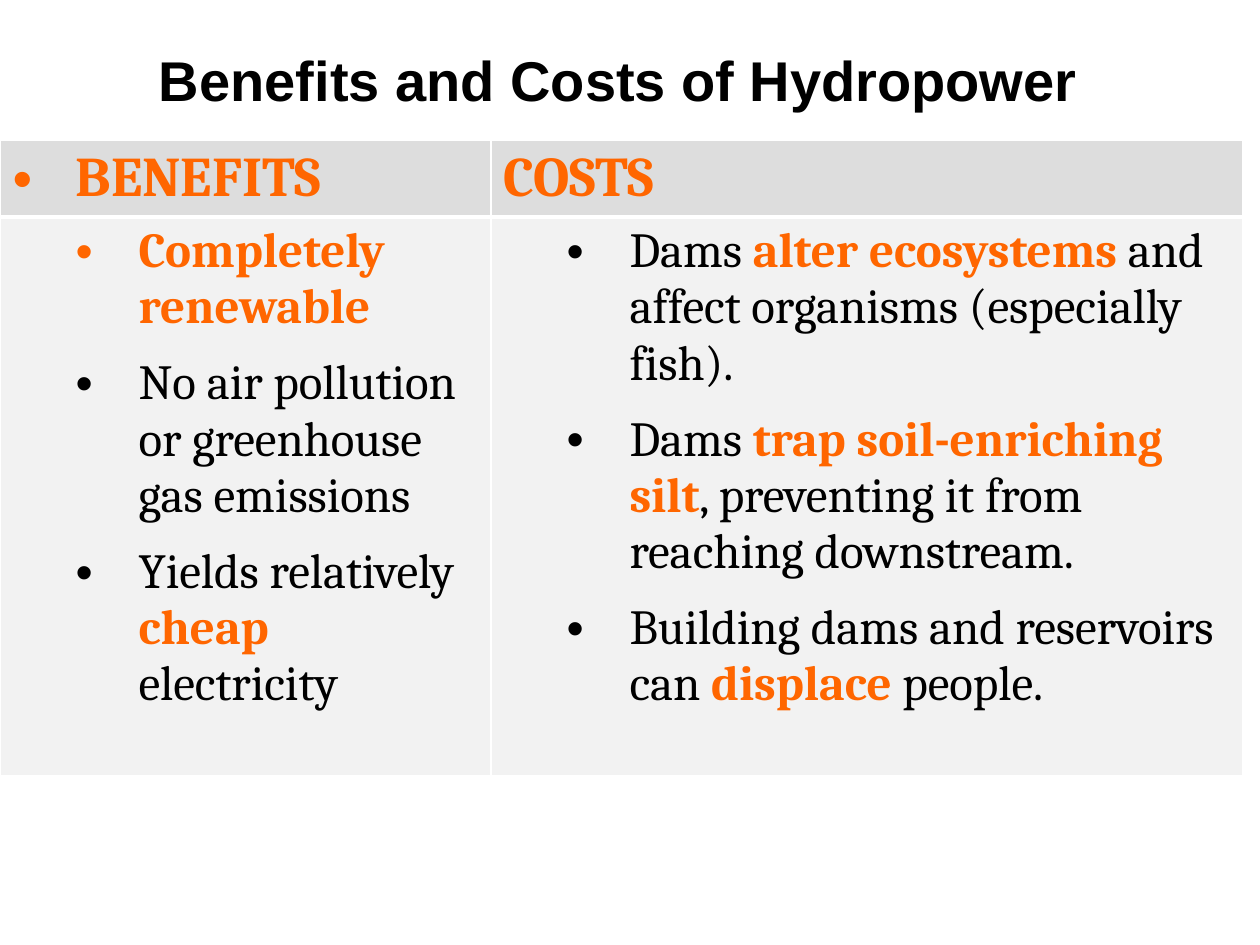
from lxml.etree import SubElement
from pptx import Presentation
from pptx.dml.color import RGBColor
from pptx.enum.text import MSO_ANCHOR, PP_ALIGN
from pptx.oxml.ns import qn
from pptx.util import Emu, Pt

TITLE = "Benefits and Costs of Hydropower"
# Text between asterisks is emphasised.
HEADERS = ["*BENEFITS*", "*COSTS*"]
POINTS = [
    [
        "*Completely renewable*",
        "No air pollution or greenhouse gas emissions",
        "Yields relatively *cheap *electricity",
    ],
    [
        "Dams *alter ecosystems *and affect organisms (especially fish).",
        "Dams *trap soil-enriching silt*, preventing it from reaching downstream.",
        "Building dams and reservoirs can *displace* people.",
    ],
]

COLUMN_WIDTHS = [491, 752]
ROW_HEIGHTS = [76, 559]
TABLE_TOP = 140
INDENT = 63
BLACK, ORANGE, WHITE = "000000", "FF6600", "FFFFFF"
HEADER_FILL, BODY_FILL = "DDDDDD", "F2F2F2"


def px(value):
    return Emu(round(value * 914400 / 126))


def color(value):
    return RGBColor.from_string(value)


def add_bullet(paragraph, left):
    properties = paragraph._p.get_or_add_pPr()
    properties.set("marL", str(px(left)))
    properties.set("indent", str(px(-INDENT)))
    SubElement(properties, qn("a:buFont"), typeface="Arial")
    SubElement(properties, qn("a:buChar"), char="•")


def write_marked(paragraph, marked_text, size):
    for index, text in enumerate(marked_text.split("*")):
        if not text:
            continue
        emphasised = index % 2 == 1
        run = paragraph.add_run()
        run.text = text
        run.font.name = "Cambria"
        run.font.size = Pt(size)
        run.font.bold = emphasised
        run.font.color.rgb = color(ORANGE if emphasised else BLACK)


def style_cell(cell, fill, top, bottom):
    """Give the cell white borders, with top and bottom widths in points, and a fill."""
    properties = cell._tc.get_or_add_tcPr()
    for edge, width in (("lnL", 1), ("lnR", 1), ("lnT", top), ("lnB", bottom)):
        line = SubElement(properties, qn(f"a:{edge}"), w=str(Pt(width)))
        solid = SubElement(line, qn("a:solidFill"))
        SubElement(solid, qn("a:srgbClr"), val=WHITE)
    cell.fill.solid()
    cell.fill.fore_color.rgb = color(fill)


def add_title(slide):
    title = slide.shapes.title
    title.left, title.top, title.width, title.height = map(px, (83, 0, 1071, 158))
    title.text_frame.text = TITLE
    title.text_frame.vertical_anchor = MSO_ANCHOR.MIDDLE
    paragraph = title.text_frame.paragraphs[0]
    paragraph.alignment = PP_ALIGN.CENTER
    font = paragraph.font
    font.name, font.size, font.bold = "Arial", Pt(32), True
    font.color.rgb = color(BLACK)


def add_comparison(slide):
    table = slide.shapes.add_table(
        len(ROW_HEIGHTS), len(COLUMN_WIDTHS), px(0), px(TABLE_TOP),
        px(sum(COLUMN_WIDTHS)), px(sum(ROW_HEIGHTS)),
    ).table
    for row, height in zip(table.rows, ROW_HEIGHTS):
        row.height = px(height)
    for column, width in enumerate(COLUMN_WIDTHS):
        table.columns[column].width = px(width)

        header = table.cell(0, column)
        style_cell(header, HEADER_FILL, top=1, bottom=3)
        paragraph = header.text_frame.paragraphs[0]
        write_marked(paragraph, HEADERS[column], 32)
        if column == 0:
            add_bullet(paragraph, INDENT)

        body = table.cell(1, column)
        style_cell(body, BODY_FILL, top=3, bottom=1)
        frame = body.text_frame
        for index, point in enumerate(POINTS[column]):
            paragraph = frame.add_paragraph() if index else frame.paragraphs[0]
            paragraph.level = 1
            paragraph.space_before = Pt(11.2 if index else 0)
            add_bullet(paragraph, 2 * INDENT)
            write_marked(paragraph, point, 28)


def main():
    presentation = Presentation()
    presentation.slide_width, presentation.slide_height = px(1260), px(945)
    slide = presentation.slides.add_slide(presentation.slide_layouts[5])
    add_title(slide)
    add_comparison(slide)
    presentation.save("out.pptx")


if __name__ == "__main__":
    main()
